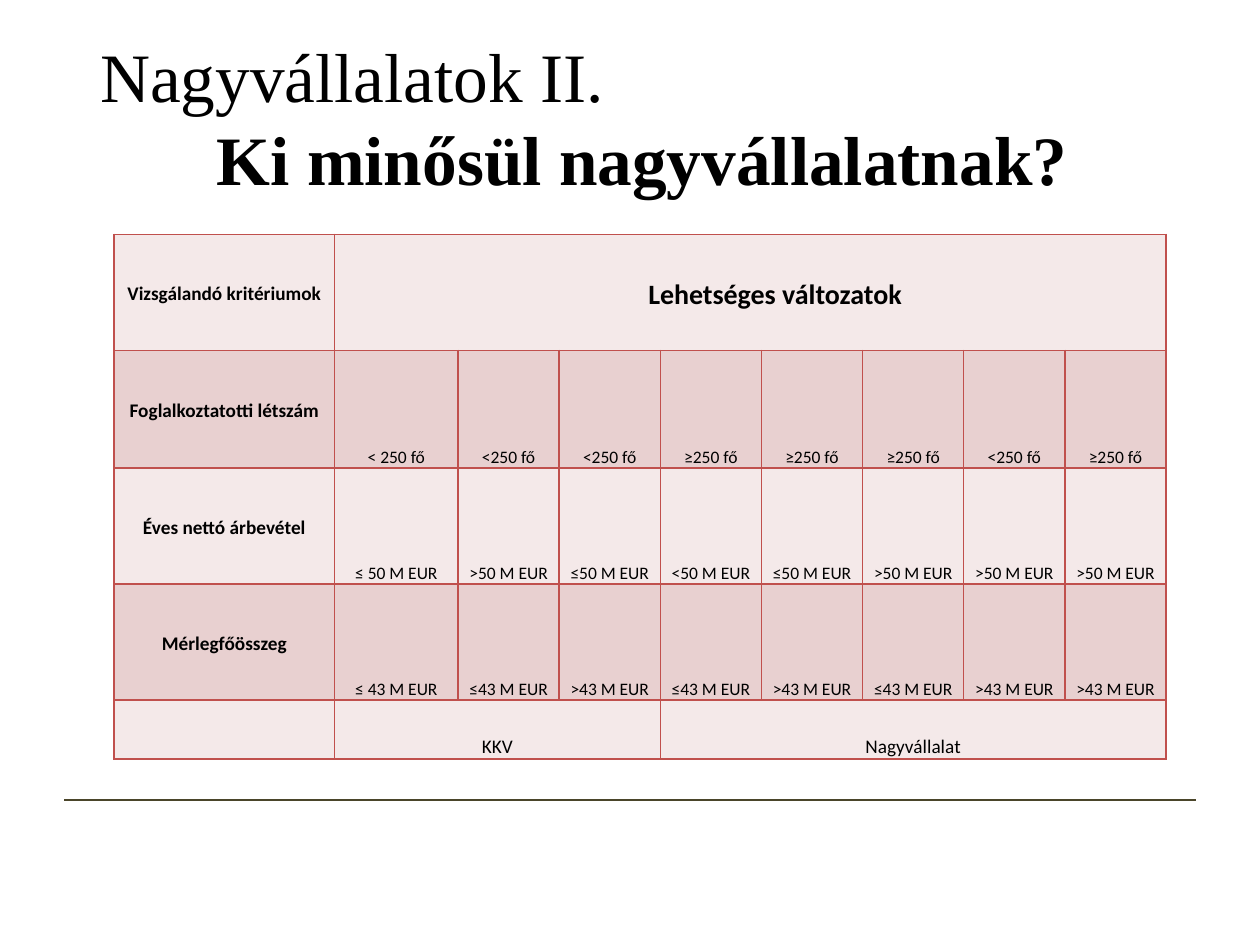
from lxml import etree
from pptx import Presentation
from pptx.dml.color import RGBColor
from pptx.enum.shapes import MSO_CONNECTOR
from pptx.enum.text import MSO_ANCHOR, MSO_AUTO_SIZE, PP_ALIGN
from pptx.oxml.ns import qn
from pptx.util import Pt

LEFT, CENTER = PP_ALIGN.LEFT, PP_ALIGN.CENTER
MIDDLE, BOTTOM = MSO_ANCHOR.MIDDLE, MSO_ANCHOR.BOTTOM
STRAIGHT = MSO_CONNECTOR.STRAIGHT

HEADING = "Nagyvállalatok II."
QUESTION = "Ki minősül nagyvállalatnak?"
CRITERIA_HEADER = "Vizsgálandó kritériumok"
VARIANTS_HEADER = "Lehetséges változatok"
CRITERIA = [
    ("Foglalkoztatotti létszám", "fő",
     ["< 250", "<250", "<250", "≥250", "≥250", "≥250", "<250", "≥250"]),
    ("Éves nettó árbevétel", "M EUR",
     ["≤ 50", ">50", "≤50", "<50", "≤50", ">50", ">50", ">50"]),
    ("Mérlegfőösszeg", "M EUR",
     ["≤ 43", "≤43", ">43", "≤43", ">43", "≤43", ">43", ">43"]),
]
RESULTS = [("KKV", 1, 3), ("Nagyvállalat", 4, 8)]

COLUMN_WIDTHS = [126, 70.5] + [57.8] * 7
ROW_HEIGHTS = [66.3, 67.4, 66.3, 66.3, 33.7]
ROW_FILLS = ["F4E9E9", "E8D0D0"]
BORDER = "C0504D"
BLACK = "000000"


def color(hex_code):
    return RGBColor.from_string(hex_code)


def format_runs(paragraph, font_name, size, bold):
    for run in paragraph.runs:
        run.font.name = font_name
        run.font.size = Pt(size)
        run.font.bold = bold
        run.font.color.rgb = color(BLACK)


def style_cell(cell, fill):
    properties = cell._tc.get_or_add_tcPr()
    for side in ("a:lnL", "a:lnR", "a:lnT", "a:lnB"):
        border = etree.SubElement(properties, qn(side), w=str(Pt(1)))
        border_fill = etree.SubElement(border, qn("a:solidFill"))
        etree.SubElement(border_fill, qn("a:srgbClr"), val=BORDER)
    cell.fill.solid()
    cell.fill.fore_color.rgb = color(fill)
    cell.margin_left = cell.margin_right = Pt(3.6)
    cell.margin_top = cell.margin_bottom = 0


def write_cell(cell, text, size, bold=False, anchor=BOTTOM):
    cell.vertical_anchor = anchor
    paragraph = cell.text_frame.paragraphs[0]
    paragraph.text = text
    paragraph.alignment = CENTER
    paragraph.line_spacing = 1.15
    format_runs(paragraph, "Calibri", size, bold)


def add_title(slide):
    title = slide.shapes.title
    title.left, title.top, title.width, title.height = Pt(36), Pt(21.6), Pt(648), Pt(90)
    frame = title.text_frame
    frame.auto_size = MSO_AUTO_SIZE.NONE
    frame.vertical_anchor = MIDDLE
    frame.text = f"{HEADING}\n{QUESTION}"
    heading, question = frame.paragraphs
    heading.alignment, question.alignment = LEFT, CENTER
    heading._p.get_or_add_pPr().set("marL", str(Pt(14)))
    format_runs(heading, "Times New Roman", 39.6, False)
    format_runs(question, "Times New Roman", 39.6, True)


def add_criteria_table(slide):
    table = slide.shapes.add_table(
        len(ROW_HEIGHTS), len(COLUMN_WIDTHS), Pt(65.2), Pt(133.9),
        Pt(sum(COLUMN_WIDTHS)), Pt(sum(ROW_HEIGHTS))).table
    for column, width in zip(table.columns, COLUMN_WIDTHS):
        column.width = Pt(width)
    for index, (row, height) in enumerate(zip(table.rows, ROW_HEIGHTS)):
        row.height = Pt(height)
        for cell in row.cells:
            style_cell(cell, ROW_FILLS[index % 2])

    write_cell(table.cell(0, 0), CRITERIA_HEADER, 11, True, MIDDLE)
    variants = table.cell(0, 1)
    variants.merge(table.cell(0, len(COLUMN_WIDTHS) - 1))
    write_cell(variants, VARIANTS_HEADER, 16, True, MIDDLE)
    variants.margin_left = Pt(32)

    for row, (criterion, unit, limits) in enumerate(CRITERIA, 1):
        write_cell(table.cell(row, 0), criterion, 11, True, MIDDLE)
        for column, limit in enumerate(limits, 1):
            write_cell(table.cell(row, column), f"{limit} {unit}", 10)

    last_row = len(ROW_HEIGHTS) - 1
    for result, first, last in RESULTS:
        cell = table.cell(last_row, first)
        cell.merge(table.cell(last_row, last))
        write_cell(cell, result, 11)


def add_footer_rule(slide):
    rule = slide.shapes.add_connector(STRAIGHT, Pt(36.7), Pt(457.2), Pt(683.3), Pt(457.2))
    rule.line.color.rgb = color("4A452A")
    rule.line.width = Pt(0.75)
    etree.SubElement(rule._element.spPr, qn("a:effectLst"))


def main():
    presentation = Presentation()
    presentation.slide_width, presentation.slide_height = Pt(720), Pt(540)
    slide = presentation.slides.add_slide(presentation.slide_layouts[5])
    add_footer_rule(slide)
    add_title(slide)
    add_criteria_table(slide)
    presentation.save("out.pptx")


if __name__ == "__main__":
    main()
